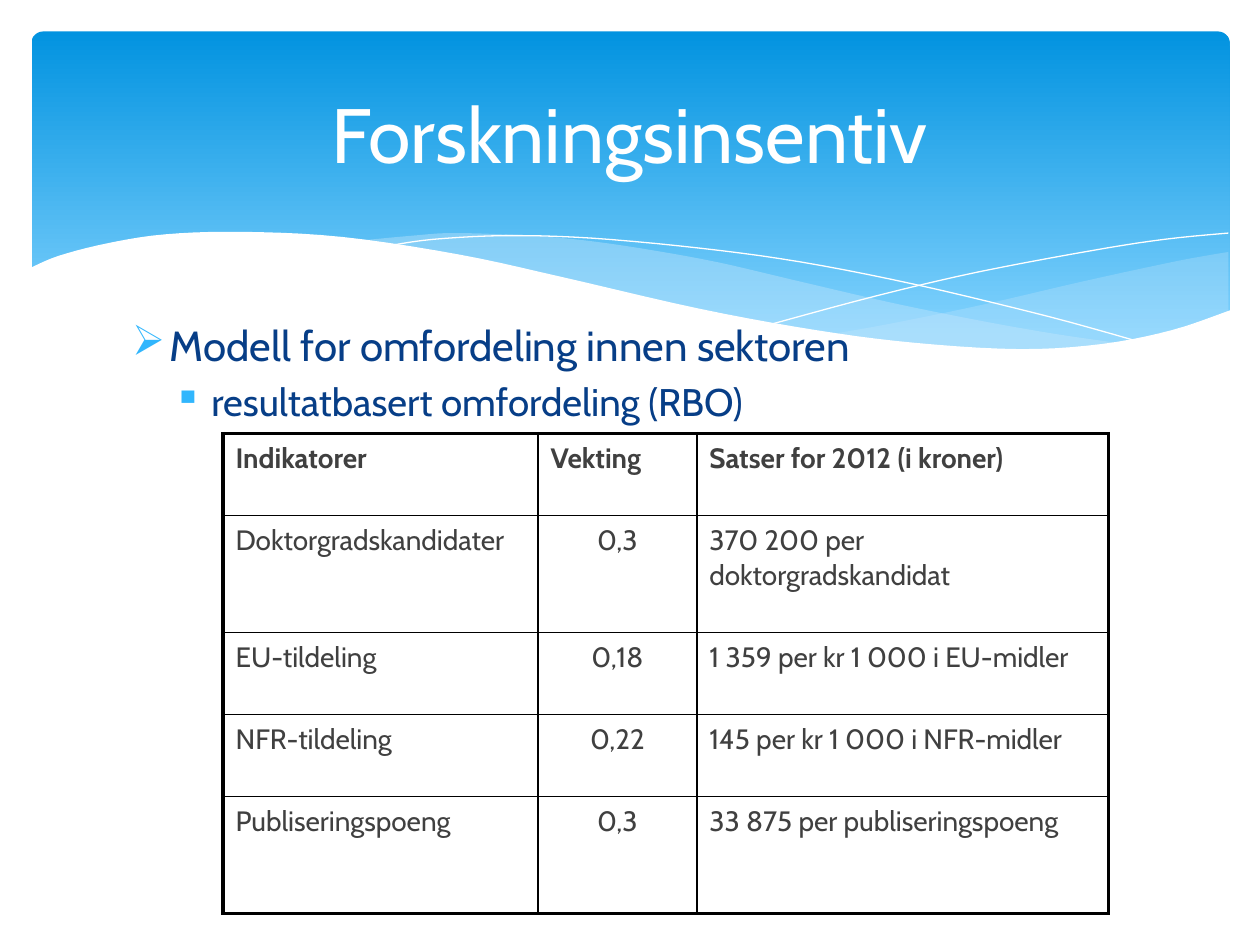
from dataclasses import dataclass

from lxml import etree
from pptx import Presentation
from pptx.dml.color import RGBColor
from pptx.enum.shapes import MSO_SHAPE
from pptx.enum.text import MSO_ANCHOR, PP_ALIGN
from pptx.oxml.ns import qn
from pptx.util import Pt

ROUND = MSO_SHAPE.ROUNDED_RECTANGLE
MIDDLE = MSO_ANCHOR.MIDDLE
LEFT, CENTER = PP_ALIGN.LEFT, PP_ALIGN.CENTER


@dataclass(frozen=True)
class Theme:
    """Colours, font and type sizes of the slide."""
    font: str = "Cabin"
    white: str = "FFFFFF"
    black: str = "000000"
    deep: str = "0293E0"
    pale: str = "83D3FE"
    veil: str = "C6E7FC"
    mark: str = "31B6FD"
    navy: str = "073E87"
    grey: str = "404040"
    title: int = 44
    lead: int = 24
    sub: int = 22
    cell: int = 16
    thin: float = 1
    thick: float = 2.25


THEME = Theme()

FLOOR = [(0, 21), (17, 13.7), (45, 6.5), (78, 1.4), (122, 0), (179, 2.9),
         (246, 13), (305, 25.9), (383, 43.9), (450, 56.2), (506, 63.4),
         (566, 67), (613, 64.1), (653, 56.2), (687, 44.6)]
BASE = [(687, 104), (0, 104)]
LONG_TOP = [(626.4, 64.1), (586, 58.3), (541.4, 50.4), (491.8, 40.3),
            (436.3, 27.4), (393.1, 17.3), (353.5, 10.1), (318.2, 5),
            (285.8, 2.2), (243.4, 0.7), (219.6, 2.2), (189.4, 5)]
LONG_LOW = [(189.4, 5), (229.7, 10.8), (274.3, 19.4), (306.7, 27.4),
            (365, 40.3), (416.2, 51.1), (462.2, 59), (503.3, 64.8),
            (548.6, 67.7), (586.8, 67.7), (626.4, 64.1)]
SIDE_TOP = [(685.4, 11.5), (656.6, 16.6), (603.4, 28.1), (544.3, 41.8),
            (491.8, 52.6), (459.4, 58.3)]
SIDE_LOW = [(459.4, 58.3), (491, 62.6), (528.5, 66.2), (569.5, 67.7),
            (611.3, 64.8), (646.6, 58.3), (685.4, 45.4)]
FALL = [(205.9, 7.9), (231.1, 4.3), (272.2, 2.2), (321.1, 3.6), (383.8, 9.4),
        (441.4, 17.3), (506.9, 30.2), (581.8, 48.2), (636.5, 63.4)]
RISE = [(424.8, 52.6), (483.8, 36.7), (542.2, 23), (607, 10.8),
        (648.7, 4.3), (685.4, 0.7)]

POINTS = [("Modell for omfordeling innen sektoren", "➢", 21.6, THEME.lead),
          ("resultatbasert omfordeling (RBO)", "▪", 45.36, THEME.sub)]
ROWS = [("Indikatorer", "Vekting", "Satser for 2012 (i kroner)"),
        ("Doktorgradskandidater", "0,3", "370 200 per doktorgradskandidat"),
        ("EU-tildeling", "0,18", "1 359 per kr 1 000 i EU-midler"),
        ("NFR-tildeling", "0,22", "145 per kr 1 000 i NFR-midler"),
        ("Publiseringspoeng", "0,3", "33 875 per publiseringspoeng")]
WIDTHS = (180, 90.72, 235.44)
HEIGHTS = (46.8, 66.96, 46.8, 46.8, 66.96)


def rgb(code):
    """Turn a hex code into a colour."""
    return RGBColor.from_string(code)


def style(para, size, color, bold=False):
    """Format every run of a paragraph."""
    for run in para.runs:
        font = run.font
        font.name, font.size, font.bold = THEME.font, Pt(size), bold
        font.color.rgb = rgb(color)


def smooth(knots, steps=5):
    """Return points along a Catmull-Rom curve through the knots."""
    ends = [knots[0], *knots, knots[-1]]
    out = [knots[0]]
    for quad in zip(ends, ends[1:], ends[2:], ends[3:]):
        for step in range(1, steps + 1):
            t = step / steps
            out.append(tuple(
                (2 * b + (c - a) * t + (2 * a - 5 * b + 4 * c - d) * t ** 2
                 + (3 * b - a - 3 * c + d) * t ** 3) / 2
                for a, b, c, d in zip(*quad)))
    return out


def trace(slide, box, dots, close):
    """Draw a path of points placed from the corner of the box."""
    spots = [(Pt(box[0] + x), Pt(box[1] + y)) for x, y in dots]
    pen = slide.shapes.build_freeform(*spots[0], scale=1.0)
    pen.add_line_segments(spots[1:], close=close)
    shape = pen.convert_to_shape()
    shape.shadow.inherit = False
    return shape


def area(slide, box, dots, color, alpha=100):
    """Draw a filled outline with the given opacity in percent."""
    shape = trace(slide, box, dots, True)
    shape.line.fill.background()
    shape.fill.solid()
    shape.fill.fore_color.rgb = rgb(color)
    if alpha < 100:
        tone = shape.fill._xPr.find(".//" + qn("a:srgbClr"))
        etree.SubElement(tone, qn("a:alpha"), val=str(alpha * 1000))


def thread(slide, box, knots):
    """Draw a white hairline curve."""
    shape = trace(slide, box, smooth(knots), False)
    shape.fill.background()
    shape.line.color.rgb = rgb(THEME.white)
    shape.line.width = Pt(0)


def band(slide, box):
    """Draw the rounded gradient panel."""
    shape = slide.shapes.add_shape(ROUND, *map(Pt, box))
    shape.adjustments[0] = 0.034
    shape.shadow.inherit = False
    shape.line.fill.background()
    shape.fill.gradient()
    shape.fill.gradient_angle = 270
    tones = ((THEME.deep, 0), (THEME.pale, 0.9))
    for stop, (color, place) in zip(shape.fill.gradient_stops, tones):
        stop.color.rgb, stop.position = rgb(color), place


def waves(slide, box):
    """Draw the veils, threads and white floor of the banner."""
    area(slide, box, smooth(SIDE_TOP) + smooth(SIDE_LOW), THEME.veil, 29)
    area(slide, box, smooth(LONG_TOP) + smooth(LONG_LOW), THEME.veil, 40)
    thread(slide, box, FALL)
    thread(slide, box, RISE)
    area(slide, box, smooth(FLOOR) + BASE, THEME.white)


def title(slide, box, text):
    """Place the centred title."""
    frame = slide.shapes.add_textbox(*map(Pt, box)).text_frame
    frame.word_wrap, frame.vertical_anchor = True, MIDDLE
    frame.text = text
    para = frame.paragraphs[0]
    para.alignment = CENTER
    style(para, THEME.title, THEME.white)


def body(slide, box):
    """Place the bulleted points."""
    frame = slide.shapes.add_textbox(*map(Pt, box)).text_frame
    frame.word_wrap = True
    frame.text = "\n".join(point[0] for point in POINTS)
    for level, para in enumerate(frame.paragraphs):
        _, sign, inset, size = POINTS[level]
        para.level, para.space_before = level, Pt(size * 0.2)
        style(para, size, THEME.navy)
        props = para._p.get_or_add_pPr()
        props.set("marL", str(Pt(inset)))
        props.set("indent", str(Pt(-21.6)))
        tint = etree.SubElement(props, qn("a:buClr"))
        etree.SubElement(tint, qn("a:srgbClr"), val=THEME.mark)
        etree.SubElement(props, qn("a:buChar"), char=sign)


def frame_cell(cell, edges):
    """Give a cell its left, right, top and bottom borders."""
    props = cell._tc.get_or_add_tcPr()
    for place, (side, outer) in enumerate(zip("LRTB", edges)):
        width = THEME.thick if outer else THEME.thin
        line = etree.Element(qn("a:ln" + side), w=str(Pt(width)))
        fill = etree.SubElement(line, qn("a:solidFill"))
        etree.SubElement(fill, qn("a:srgbClr"), val=THEME.black)
        props.insert(place, line)


def rates(slide, box):
    """Place the table of indicators, weights and rates."""
    last, end = len(ROWS) - 1, len(WIDTHS) - 1
    table = slide.shapes.add_table(last + 1, end + 1, *map(Pt, box)).table
    table.first_row = table.horz_banding = False
    for col, width in zip(table.columns, WIDTHS):
        col.width = Pt(width)
    for r, (row, high) in enumerate(zip(ROWS, HEIGHTS)):
        table.rows[r].height = Pt(high)
        for c, text in enumerate(row):
            cell = table.cell(r, c)
            cell.text = text
            cell.fill.background()
            frame_cell(cell, (c == 0, c == end, r == 0, r == last))
            para = cell.text_frame.paragraphs[0]
            para.alignment = CENTER if r and c == 1 else LEFT
            para.line_spacing = 1.05
            para.space_before = para.space_after = Pt(THEME.cell * 0.2)
            style(para, THEME.cell, THEME.grey, r == 0)


def main():
    """Build and save the slide."""
    deck = Presentation()
    deck.slide_width, deck.slide_height = Pt(720), Pt(540)
    slide = deck.slides.add_slide(deck.slide_layouts[6])
    band(slide, (18, 18, 684.72, 194.4))
    waves(slide, (16.56, 132.48))
    body(slide, (68.4, 179.28, 583.2, 303.12))
    title(slide, (36, 26.64, 648, 98.64), "Forskningsinsentiv")
    rates(slide, (127.44, 247.68, sum(WIDTHS), sum(HEIGHTS)))
    deck.save("out.pptx")


if __name__ == "__main__":
    main()
